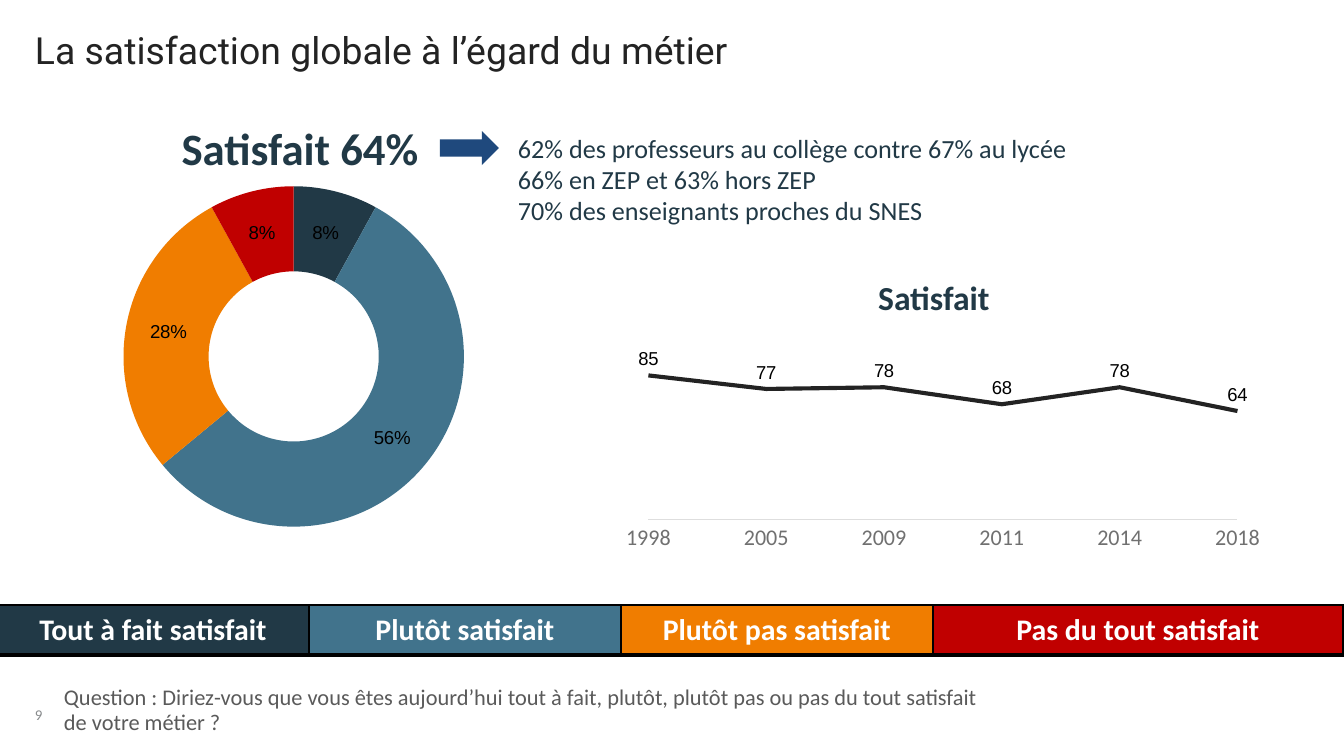
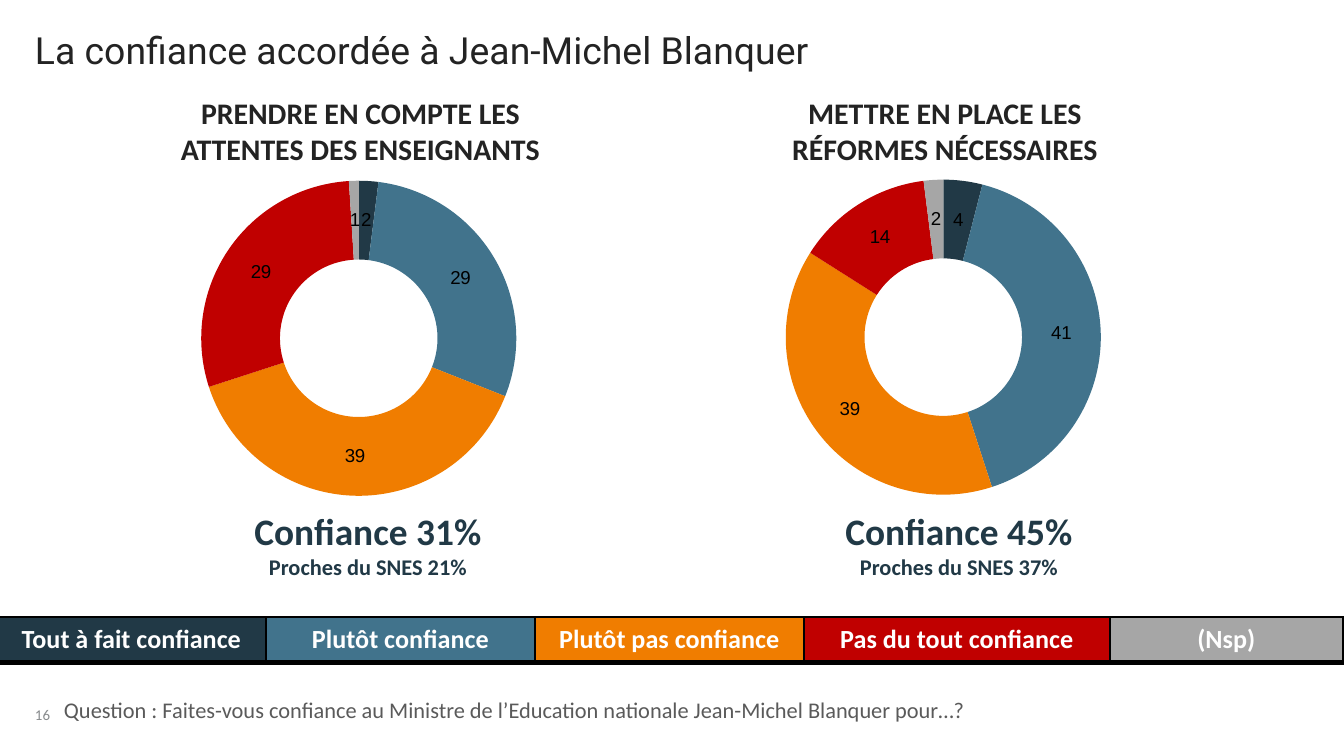
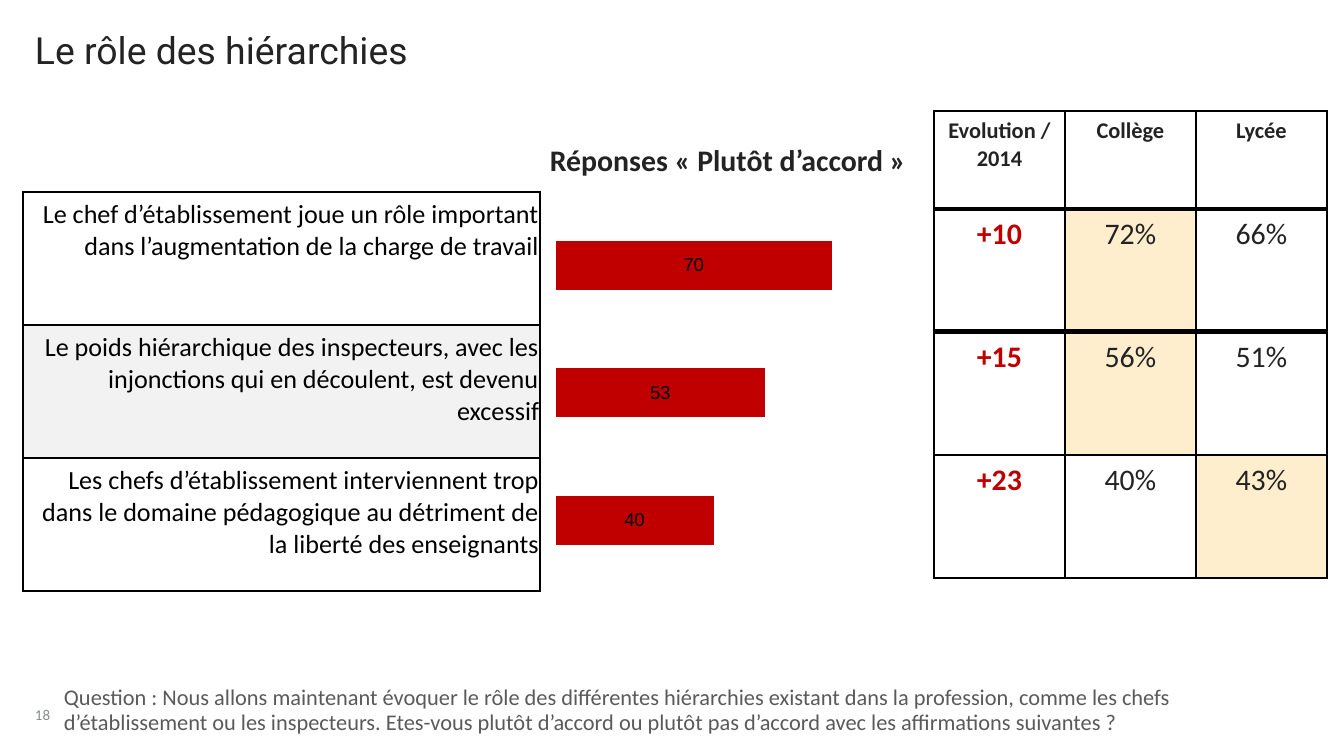
import pptx
import pptx.chart.data
import pptx.dml.color
import pptx.enum.chart
import pptx.enum.shapes
import pptx.enum.text
import pptx.oxml
import pptx.oxml.ns
import pptx.util

RGB = pptx.dml.color.RGBColor
Kind = pptx.enum.chart.XL_CHART_TYPE
Place = pptx.enum.chart.XL_LABEL_POSITION
Form = pptx.enum.shapes.MSO_SHAPE
Align = pptx.enum.text.PP_ALIGN
Anchor = pptx.enum.text.MSO_ANCHOR
Pt = pptx.util.Pt

NAVY = RGB(0x21, 0x39, 0x46)
TEAL = RGB(0x41, 0x73, 0x8C)
ORANGE = RGB(0xF0, 0x7D, 0x00)
RED = RGB(0xC0, 0x00, 0x00)
SILVER = RGB(0xA6, 0xA6, 0xA6)
INK = RGB(0x23, 0x23, 0x23)
BLACK = RGB(0x00, 0x00, 0x00)
WHITE = RGB(0xFF, 0xFF, 0xFF)
SLATE = RGB(0x5A, 0x5A, 0x5A)
GREY = RGB(0x88, 0x8B, 0x8D)
AXIS = RGB(0x70, 0x70, 0x70)
RULE = RGB(0xDE, 0xDE, 0xDE)
BLUE = RGB(0x1F, 0x49, 0x7D)
CREAM = RGB(0xFE, 0xEE, 0xCE)
PALE = RGB(0xF2, 0xF2, 0xF2)

SCALE = 914400 / 134.4
WIDE, HIGH = 1344, 756
SCORES = [NAVY, TEAL, ORANGE, RED, SILVER]
THIN, THICK = 0.96, 3
TIGHT = (1, 7)


def px(*sizes):
    """Turn pixel lengths into EMU."""
    return [pptx.util.Emu(round(size * SCALE)) for size in sizes]


def style(font, size, color, bold=False, face="Calibri"):
    """Set the look of a font."""
    font.name, font.size, font.bold = face, Pt(size), bold
    font.color.rgb = color


def write(frame, lines, align=Align.LEFT, space=None, face="Calibri"):
    """Fill a text frame with (text, size, colour, bold) lines."""
    for i, (text, size, color, bold) in enumerate(lines):
        para = frame.add_paragraph() if i else frame.paragraphs[0]
        para.alignment = align
        para.line_spacing = space
        run = para.add_run()
        run.text = text
        style(run.font, size, color, bold, face)


def bare(frame, anchor=Anchor.TOP, wrap=True):
    """Strip the insets of a text frame."""
    frame.margin_left = frame.margin_right = 0
    frame.margin_top = frame.margin_bottom = 0
    frame.word_wrap = wrap
    frame.auto_size = pptx.enum.text.MSO_AUTO_SIZE.NONE
    frame.vertical_anchor = anchor


def label(slide, box, lines, align=Align.CENTER):
    """Add a block of plain text."""
    frame = slide.shapes.add_textbox(*px(*box)).text_frame
    bare(frame)
    write(frame, lines, align)


def solid(slide, form, box, color):
    """Add a filled shape without outline."""
    shape = slide.shapes.add_shape(form, *px(*box))
    shape.shadow.inherit = False
    shape.fill.solid()
    shape.fill.fore_color.rgb = color
    shape.line.fill.background()
    return shape


def start(deck, title, page):
    """Add a slide with its title and page number."""
    slide = deck.slides.add_slide(deck.slide_layouts[5])
    head = slide.shapes.title
    head.left, head.top, head.width, head.height = px(35, 32, 1271, 40)
    bare(head.text_frame)
    write(head.text_frame, [(title, 20, INK, False)], space=0.9, face="Roboto")
    foot = slide.shapes.add_textbox(*px(35, 689, 46, 35)).text_frame
    bare(foot, Anchor.BOTTOM, False)
    write(foot, [(str(page), 8, GREY, False)], space=0.85)
    return slide


def ask(slide, text, width, filled=False):
    """Add the survey question at the foot."""
    box = (64, 687, width, 47)
    if filled:
        shape = solid(slide, Form.RECTANGLE, box, WHITE)
    else:
        shape = slide.shapes.add_textbox(*px(*box))
    bare(shape.text_frame, Anchor.MIDDLE)
    write(shape.text_frame, [(text, 12, SLATE, False)], space=0.95)


def edge(cell, top, base):
    """Draw black cell borders, given top and bottom widths."""
    props = cell._tc.get_or_add_tcPr()
    sides = {"L": THIN, "R": THIN, "T": top, "B": base}
    for i, (side, width) in enumerate(sides.items()):
        props.insert(i, pptx.oxml.parse_xml(
            f'<a:ln{side} {pptx.oxml.ns.nsdecls("a")} w="{Pt(width)}">'
            f'<a:solidFill><a:srgbClr val="{BLACK}"/></a:solidFill></a:ln{side}>'))


def grid(slide, spot, cols, rows, bases):
    """Add a plain table with a bottom border width for each row."""
    table = slide.shapes.add_table(
        len(rows), len(cols), *px(*spot, sum(cols), sum(rows))).table
    table.first_row = table.horz_banding = False
    for col, width in zip(table.columns, px(*cols)):
        col.width = width
    tops = [THIN] + bases
    for row, height, top, base in zip(table.rows, px(*rows), tops, bases):
        row.height = height
        for cell in row.cells:
            edge(cell, top, base)
    return table


def put(cell, line, fill=None, align=Align.CENTER, pad=None):
    """Fill one table cell."""
    write(cell.text_frame, [line], align)
    if pad:
        cell.margin_left, cell.margin_top = px(*pad)
        cell.margin_right, cell.margin_bottom = px(*pad)
    if fill is None:
        cell.fill.background()
    else:
        cell.fill.solid()
        cell.fill.fore_color.rgb = fill


def legend(slide, top, cols, height, size, names):
    """Add the colour key across the slide."""
    table = grid(slide, (-3, top), cols, [height], [THICK])
    for cell, name, color in zip(table.rows[0].cells, names, SCORES):
        put(cell, (name, size, WHITE, True), color)


def graph(slide, kind, box, cats, vals, area):
    """Add a one-series chart with a fixed plot area."""
    data = pptx.chart.data.CategoryChartData()
    data.categories = cats
    data.add_series("Series 1", vals)
    chart = slide.shapes.add_chart(kind, *px(*box), data).chart
    chart.has_title = chart.has_legend = False
    style(chart.font, 10, BLACK, face="Arial")
    plot = chart.plots[0]
    plot.has_data_labels = True
    plot.data_labels.show_value = True
    zone = chart.element.xpath(".//c:plotArea")[0]
    for old in zone.xpath("./c:layout"):
        zone.remove(old)
    spots = "".join(f'<c:{key} val="{val}"/>' for key, val in zip("xywh", area))
    zone.insert(0, pptx.oxml.parse_xml(
        f'<c:layout {pptx.oxml.ns.nsdecls("c")}><c:manualLayout>'
        '<c:layoutTarget val="inner"/><c:xMode val="edge"/><c:yMode val="edge"/>'
        f'{spots}</c:manualLayout></c:layout>'))
    return chart


def ring(slide, box, vals, area, share=False):
    """Add a doughnut chart in the score colours."""
    cats = [str(i + 1) for i in range(len(vals))]
    plot = graph(slide, Kind.DOUGHNUT, box, cats, vals, area).plots[0]
    plot.vary_by_categories = False
    for i, color in enumerate(SCORES[:len(vals)]):
        fill = plot.series[0].points[i].format.fill
        fill.solid()
        fill.fore_color.rgb = color
    if share:
        tags = plot.data_labels
        tags.show_value, tags.show_percentage = False, True
        tags.number_format, tags.number_format_is_linked = "0%", False


def scale(chart):
    """Hide the 0 to 100 axis and turn the category order."""
    axis = chart.value_axis
    axis.minimum_scale, axis.maximum_scale = 0, 100
    axis.has_major_gridlines = False
    axis.visible = False
    chart.category_axis.reverse_order = True
    chart.plots[0].vary_by_categories = False


def trend(slide, box, years, vals, area):
    """Add the line chart of past results."""
    chart = graph(slide, Kind.LINE_STACKED, box, years, vals, area)
    scale(chart)
    none = pptx.enum.chart.XL_TICK_MARK.NONE
    axis = chart.category_axis
    axis.major_tick_mark = axis.minor_tick_mark = none
    style(axis.tick_labels.font, 12, AXIS)
    axis.format.line.color.rgb = RULE
    axis.format.line.width = Pt(0.75)
    for old in chart.element.xpath(".//c:valAx/c:crossBetween"):
        old.getparent().remove(old)
    chart.element.xpath(".//c:valAx/c:crosses")[0].addnext(pptx.oxml.parse_xml(
        f'<c:crossBetween {pptx.oxml.ns.nsdecls("c")} val="midCat"/>'))
    chart.plots[0].data_labels.position = Place.ABOVE
    line = chart.plots[0].series[0]
    line.smooth = False
    line.marker.style = pptx.enum.chart.XL_MARKER_STYLE.NONE
    line.format.line.color.rgb = INK
    line.format.line.width = Pt(2.25)


def bars(slide, box, vals, area):
    """Add the bar chart of agreement."""
    chart = graph(slide, Kind.BAR_STACKED, box, ["1", "2", "3"], vals, area)
    scale(chart)
    chart.category_axis.visible = False
    plot = chart.plots[0]
    plot.gap_width, plot.overlap = 160, 100
    plot.data_labels.position = Place.CENTER
    fill = plot.series[0].format.fill
    fill.solid()
    fill.fore_color.rgb = RED


def job(deck):
    """Build the slide on job satisfaction."""
    slide = start(deck, "La satisfaction globale à l’égard du métier", 9)
    ring(slide, (16, 165, 527, 469), [8, 56, 28, 8],
         (0.204, 0.045, 0.646, 0.727), True)
    ask(slide, "Question : Diriez-vous que vous êtes aujourd’hui tout à fait, "
        "plutôt, plutôt pas ou pas du tout satisfait de votre métier ?", 926)
    legend(slide, 605, [312, 312, 312, 410], 43, 16,
           ["Tout à fait satisfait", "Plutôt satisfait",
            "Plutôt pas satisfait", "Pas du tout satisfait"])
    label(slide, (142, 121, 316, 54), [("Satisfait 64%", 24, NAVY, True)])
    trend(slide, (626, 324, 634, 277),
          ["2018", "2014", "2011", "2009", "2005", "1998"],
          [64, 78, 68, 78, 77, 85], (0.032, 0.094, 0.942, 0.613))
    label(slide, (776, 277, 316, 40), [("Satisfait", 18, NAVY, True)])
    solid(slide, Form.RIGHT_ARROW, (440, 131, 59, 34), BLUE)
    facts = ["62% des professeurs au collège contre 67% au lycée",
             "66% en ZEP et 63% hors ZEP",
             "70% des enseignants proches du SNES"]
    label(slide, (518, 132, 594, 94),
          [(fact, 14, NAVY, False) for fact in facts], Align.LEFT)


def trust(deck):
    """Build the slide on trust in the minister."""
    slide = start(deck, "La confiance accordée à Jean-Michel Blanquer", 16)
    ask(slide, "Question : Faites-vous confiance au Ministre de l’Education "
        "nationale Jean-Michel Blanquer pour…?", 937)
    legend(slide, 617, [269, 269, 269, 306, 233], 40, 14,
           ["Tout à fait confiance", "Plutôt confiance",
            "Plutôt pas confiance", "Pas du tout confiance", "(Nsp)"])
    sides = [
        ("PRENDRE EN COMPTE LES ATTENTES DES ENSEIGNANTS", (148, 95, 425, 71),
         (105, 110), (0.175, 0.145), [2, 29, 39, 29, 1], 210, 31, 21),
        ("METTRE EN PLACE LES RÉFORMES NÉCESSAIRES", (749, 95, 392, 71),
         (684, 103), (0.185, 0.157), [4, 41, 39, 14, 2], 801, 45, 37),
    ]
    for head, box, spot, inner, vals, left, total, near in sides:
        ring(slide, (*spot, 550, 487), vals, (*inner, 0.573, 0.648))
        label(slide, (left, 508, 316, 71),
              [(f"Confiance {total}%", 20, NAVY, True),
               (f"Proches du SNES {near}%", 12, NAVY, True)])
        label(slide, box, [(head, 16, INK, True)])


def chiefs(deck):
    """Build the slide on the role of superiors."""
    slide = start(deck, "Le rôle des hiérarchies", 18)
    ask(slide, "Question : Nous allons maintenant évoquer le rôle des "
        "différentes hiérarchies existant dans la profession, comme les chefs "
        "d’établissement ou les inspecteurs. Etes-vous plutôt d’accord ou "
        "plutôt pas d’accord avec les affirmations suivantes ?", 1159, True)
    bars(slide, (540, 202, 422, 382), [70, 53, 40], (0.037, 0, 0.936, 1))
    claims = [
        ("Le chef d’établissement joue un rôle important dans l’augmentation "
         "de la charge de travail", None),
        ("Le poids hiérarchique des inspecteurs, avec les injonctions qui en "
         "découlent, est devenu excessif", PALE),
        ("Les chefs d’établissement interviennent trop dans le domaine "
         "pédagogique au détriment de la liberté des enseignants", None),
    ]
    table = grid(slide, (23, 192), [517], [133] * 3, [THIN] * 3)
    for row, (claim, fill) in zip(table.rows, claims):
        put(row.cells[0], (claim, 14, BLACK, False), fill, Align.RIGHT, TIGHT)

    table = grid(slide, (934, 111), [131] * 3, [98] + [123] * 3,
                 [THICK, THICK, THIN, THIN])
    for cell, head in zip(table.rows[0].cells,
                          ["Evolution / 2014", "Collège", "Lycée"]):
        put(cell, (head, 12, INK, True))
    rates = [(10, 72, 66), (15, 56, 51), (23, 40, 43)]
    for i, (gain, *pair) in enumerate(rates, 1):
        put(table.cell(i, 0), (f"+{gain}", 16, RED, True), pad=TIGHT)
        for j, rate in enumerate(pair, 1):
            fill = CREAM if rate == max(pair) else None
            put(table.cell(i, j), (f"{rate}%", 16, INK, False), fill, pad=TIGHT)
    label(slide, (550, 142, 405, 36),
          [("Réponses « Plutôt d’accord »", 16, INK, True)], Align.LEFT)


def main():
    """Build and save the deck."""
    deck = pptx.Presentation()
    deck.slide_width, deck.slide_height = px(WIDE, HIGH)
    job(deck)
    trust(deck)
    chiefs(deck)
    deck.save("out.pptx")


if __name__ == "__main__":
    main()
